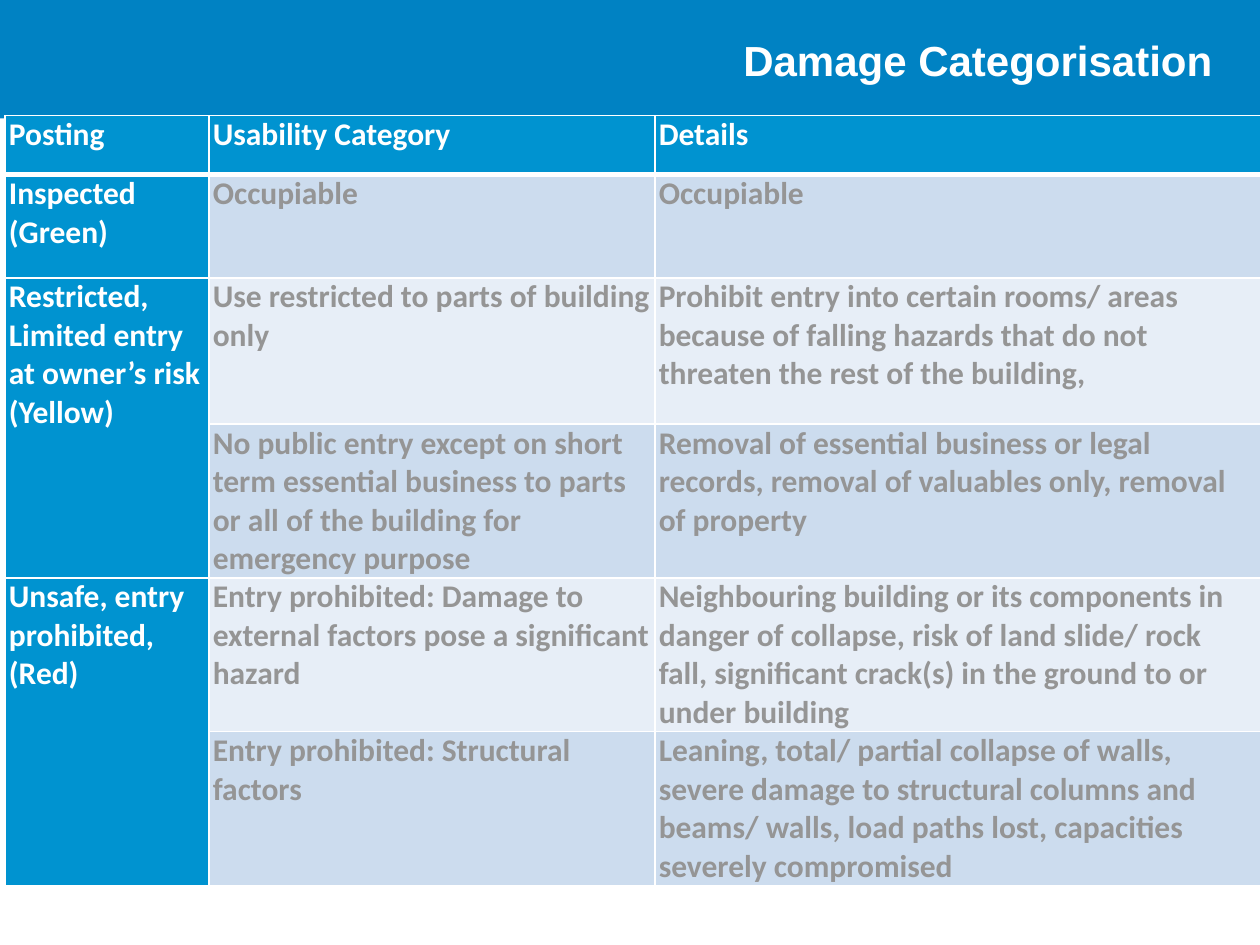
import pptx
import pptx.dml.color
import pptx.enum.shapes
import pptx.enum.text
import pptx.oxml
import pptx.oxml.ns
import pptx.util

Cm, Pt = pptx.util.Cm, pptx.util.Pt

TITLE = "Damage Categorisation"
HEADER = ["Posting", "Usability Category", "Details"]
# Each posting covers one or more (usability category, details) rows.
POSTINGS = [
    ("Inspected\n(Green)", [("Occupiable", "Occupiable")]),
    ("Restricted, Limited entry at owner’s risk (Yellow)", [
        ("Use restricted to parts of building only",
         "Prohibit entry into certain rooms/ areas because of falling hazards "
         "that do not threaten the rest of the building,"),
        ("No public entry except on short term essential business to parts or "
         "all of the building for emergency purpose",
         "Removal of essential business or legal records, removal of valuables "
         "only, removal of property"),
    ]),
    ("Unsafe, entry prohibited, (Red)", [
        ("Entry prohibited: Damage to external factors pose a significant hazard",
         "Neighbouring building or its components in danger of collapse, risk of "
         "land slide/ rock fall, significant crack(s) in the ground to or under "
         "building"),
        ("Entry prohibited: Structural factors",
         "Leaning, total/ partial collapse of walls, severe damage to structural "
         "columns and beams/ walls, load paths lost, capacities severely "
         "compromised"),
    ]),
]

COLUMN_WIDTHS = [4.11, 8.99, 12.22]
ROW_HEIGHTS = [1.19, 2.08, 2.95, 3.1, 3.1, 3.1]
BANNER_HEIGHT = 2.39
WHITE, GREY = "FFFFFF", "959595"
BANNER_BLUE, TABLE_BLUE = "0082C3", "0093D0"
BANDS = ["CCDCEE", "E7EEF7"]


def paint(target, colour):
    """Give a fill a solid colour."""
    target.solid()
    target.fore_color.rgb = pptx.dml.color.RGBColor.from_string(colour)


def style_font(font, name, size, colour):
    font.name, font.size, font.bold = name, Pt(size), True
    paint(font.fill, colour)


def set_borders(cell, bottom_width):
    properties = cell._tc.get_or_add_tcPr()
    for index, side in enumerate("LRTB"):
        width = Pt(bottom_width if side == "B" else 1)
        properties.insert(index, pptx.oxml.parse_xml(
            f'<a:ln{side} {pptx.oxml.ns.nsdecls("a")} w="{width}"><a:solidFill>'
            f'<a:srgbClr val="{WHITE}"/></a:solidFill></a:ln{side}>'))


def fill_cell(cell, text, fill, colour, bottom_width=1):
    cell.margin_left = cell.margin_right = Cm(0.08)
    cell.margin_top = cell.margin_bottom = 0
    cell.text = text
    for para in cell.text_frame.paragraphs:
        style_font(para.font, "Calibri", 18, colour)
    paint(cell.fill, fill)
    set_borders(cell, bottom_width)


def add_banner(page, width):
    banner = page.shapes.add_shape(
        pptx.enum.shapes.MSO_SHAPE.RECTANGLE, 0, 0, width, Cm(BANNER_HEIGHT))
    banner.shadow.inherit = False
    paint(banner.fill, BANNER_BLUE)
    banner.line.fill.background()

    box = page.shapes.add_textbox(Cm(5.54), 0, Cm(19.15), Cm(BANNER_HEIGHT))
    box.text_frame.word_wrap = True
    box.text_frame.vertical_anchor = pptx.enum.text.MSO_ANCHOR.MIDDLE
    para = box.text_frame.paragraphs[0]
    para.text = TITLE
    para.alignment = pptx.enum.text.PP_ALIGN.RIGHT
    style_font(para.font, "Arial", 24, WHITE)


def add_categories(page):
    table = page.shapes.add_table(
        len(ROW_HEIGHTS), len(COLUMN_WIDTHS), Cm(0.1), Cm(2.33),
        Cm(sum(COLUMN_WIDTHS)), Cm(sum(ROW_HEIGHTS))).table
    table.horz_banding = False
    for column, width in zip(table.columns, COLUMN_WIDTHS):
        column.width = Cm(width)
    for row, height in zip(table.rows, ROW_HEIGHTS):
        row.height = Cm(height)

    for column, text in enumerate(HEADER):
        fill_cell(table.cell(0, column), text, TABLE_BLUE, WHITE, bottom_width=3)
    top = 1
    for posting, entries in POSTINGS:
        for row, entry in enumerate(entries, top):
            fill_cell(table.cell(row, 0), posting if row == top else "",
                      TABLE_BLUE, WHITE)
            for column, text in enumerate(entry, 1):
                fill_cell(table.cell(row, column), text, BANDS[(row - 1) % 2], GREY)
        if len(entries) > 1:
            table.cell(top, 0).merge(table.cell(top + len(entries) - 1, 0))
        top += len(entries)


def main():
    deck = pptx.Presentation()
    deck.slide_width, deck.slide_height = Cm(25.4), Cm(19.05)
    page = deck.slides.add_slide(deck.slide_layouts[6])
    add_banner(page, deck.slide_width)
    add_categories(page)
    deck.save("out.pptx")


if __name__ == "__main__":
    main()
